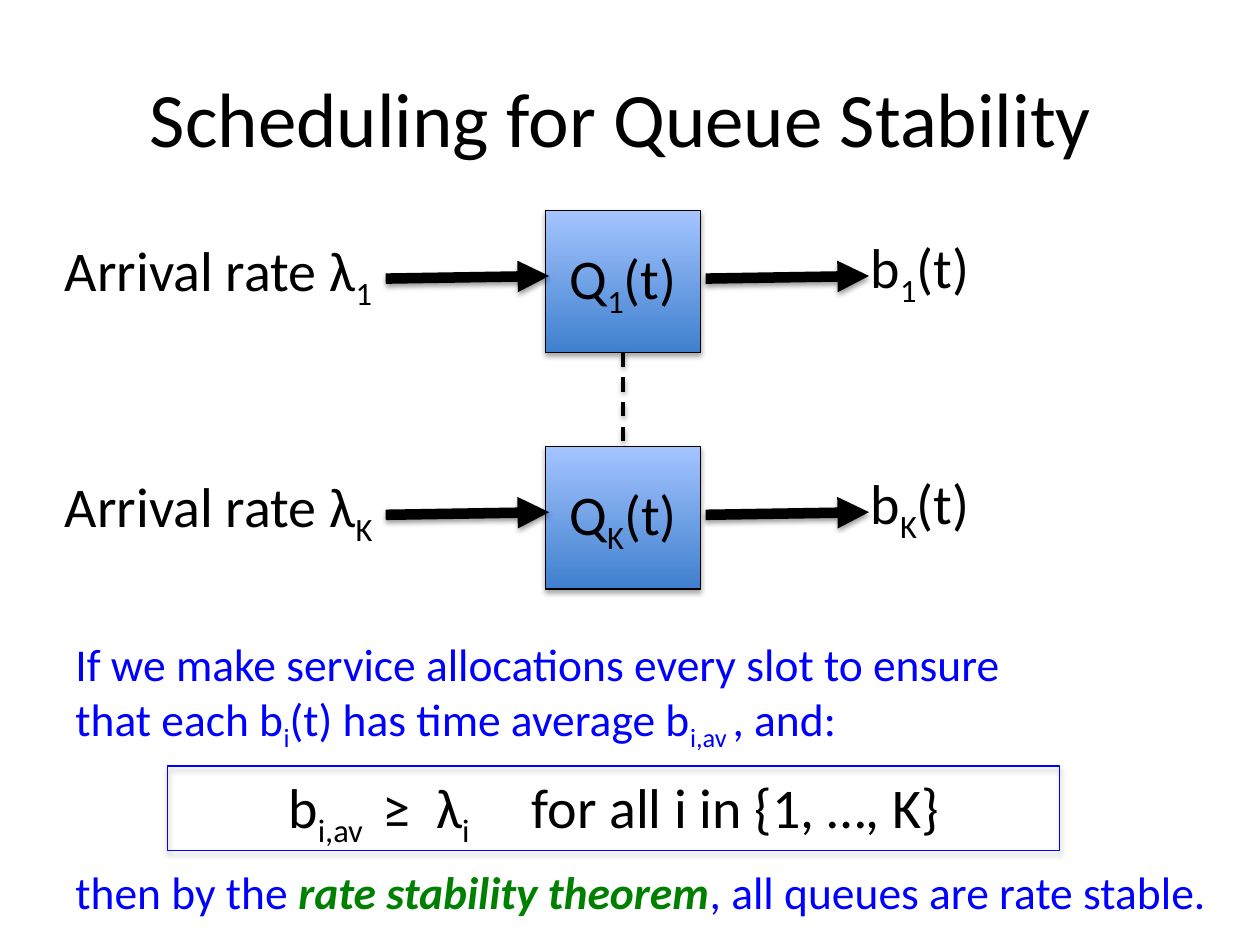
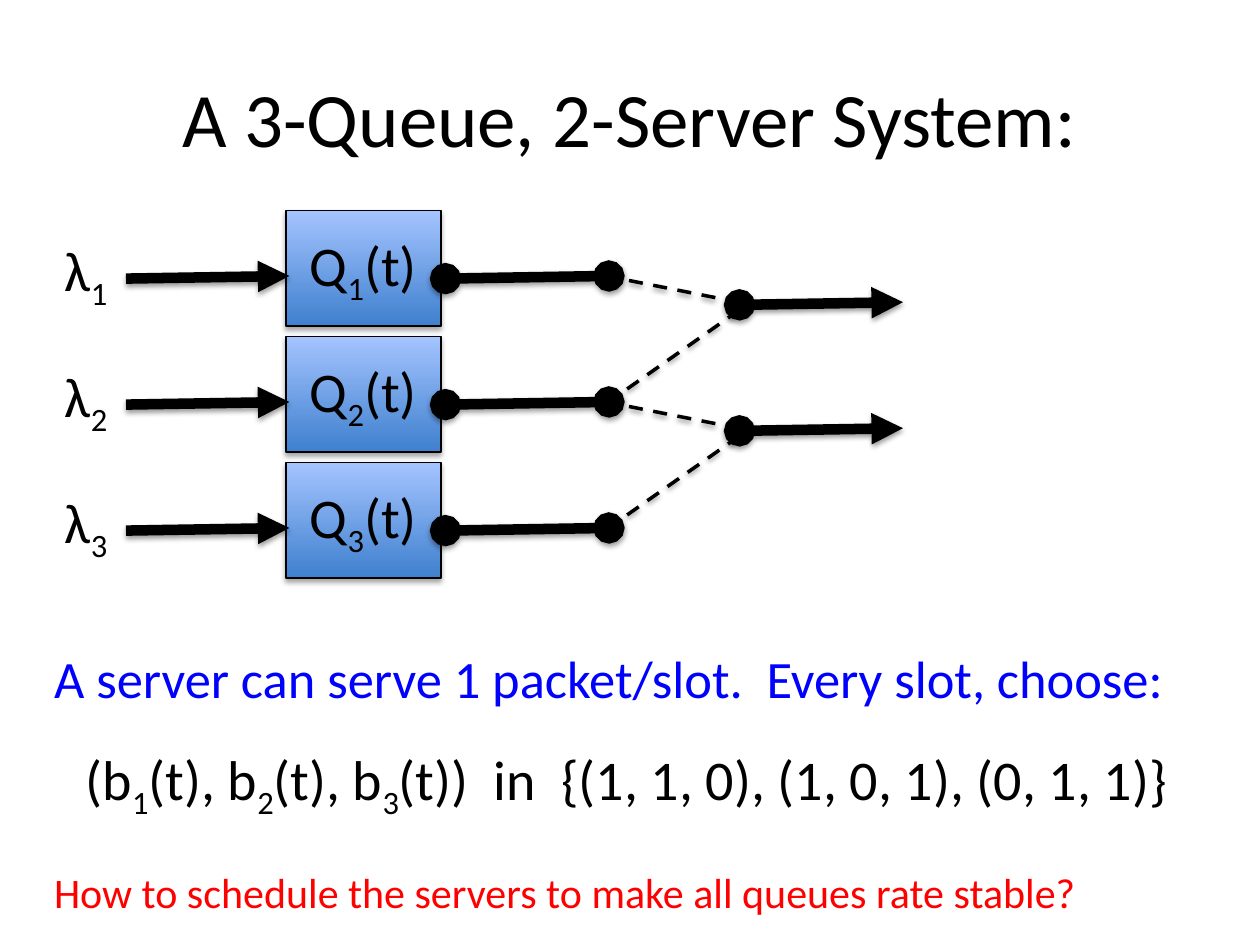
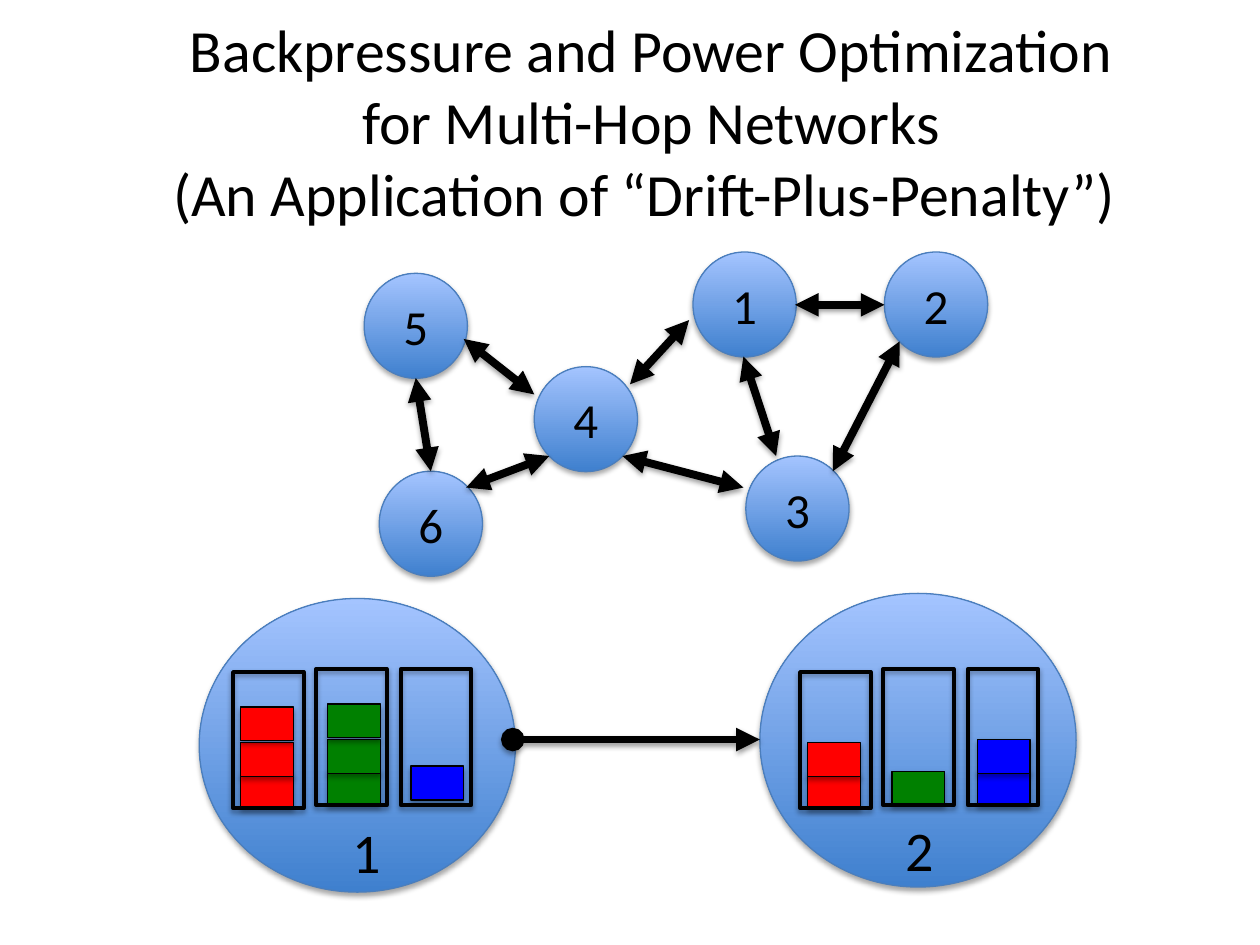
from lxml.etree import SubElement
from pptx import Presentation
from pptx.dml.color import RGBColor
from pptx.enum.dml import MSO_LINE
from pptx.enum.shapes import MSO_CONNECTOR, MSO_SHAPE
from pptx.enum.text import MSO_ANCHOR, MSO_AUTO_SIZE, PP_ALIGN
from pptx.oxml.ns import qn
from pptx.util import Pt

BLACK, BLUE, GREEN, RED = "000000", "0000FF", "008000", "FF0000"
GRADIENT = ("3F80CE", "A4C4FF")
NODE_LINE = "4B7EBC"
FONT = "Calibri"
EMPHASIS = {"bold": True, "italic": True}
LABEL_FRAME = {"word_wrap": False, "auto_size": MSO_AUTO_SIZE.SHAPE_TO_FIT_TEXT}
CENTRED_FRAME = {"word_wrap": True, "vertical_anchor": MSO_ANCHOR.MIDDLE}


def color(hex_value):
    return RGBColor.from_string(hex_value)


def apply(target, values):
    for name, value in values.items():
        setattr(target, name, value)


def points(values):
    return [Pt(value) for value in values]


class Deck:
    def __init__(self):
        self.presentation = Presentation()
        apply(self.presentation, {"slide_width": Pt(720), "slide_height": Pt(540)})

    def add_slide(self, title, size=44, box=(36, 21.6, 648, 90)):
        layout = self.presentation.slide_layouts[6]
        self.slide = self.presentation.slides.add_slide(layout)
        shape = self.slide.shapes.add_textbox(*points(box))
        self.set_text(shape, title, size, BLACK, CENTRED_FRAME, PP_ALIGN.CENTER)

    def set_text(self, shape, text, size, text_color, frame_format, alignment):
        frame = shape.text_frame
        apply(frame, frame_format)
        for index, line in enumerate(text.split("\n")):
            paragraph = frame.add_paragraph() if index else frame.paragraphs[0]
            paragraph.alignment = alignment
            for star, phrase in enumerate(line.split("*")):
                for bar, piece in enumerate(phrase.split("|")):
                    if piece:
                        run = paragraph.add_run()
                        run.text = piece
                        apply(run.font, {"name": FONT, "size": Pt(size)})
                        apply(run.font, EMPHASIS if star % 2 else {})
                        run.font.color.rgb = color(GREEN if star % 2 else text_color)
                        if bar % 2:
                            run.font._element.set("baseline", "-25000")

    def label(self, text, left, top, width, height=46, size=32, text_color=BLACK):
        shape = self.slide.shapes.add_textbox(*points((left, top, width, height)))
        self.set_text(shape, text, size, text_color, LABEL_FRAME, PP_ALIGN.LEFT)
        return shape

    def shadow(self, shape, opacity, distance):
        effects = SubElement(shape.element.spPr, qn("a:effectLst"))
        outer = SubElement(effects, qn("a:outerShdw"), blurRad=str(Pt(3.1)),
                           dist=str(Pt(distance)), dir="5400000", rotWithShape="0")
        shade = SubElement(outer, qn("a:srgbClr"), val=BLACK)
        SubElement(shade, qn("a:alpha"), val=str(opacity * 1000))

    def shape(self, kind, box, text="", size=32, fill=None, line=BLACK, width=0.75):
        shape = self.slide.shapes.add_shape(kind, *points(box))
        if fill == GRADIENT:
            shape.fill.gradient()
            shape.fill.gradient_angle = 90
            for stop, value in zip(shape.fill.gradient_stops, GRADIENT):
                stop.color.rgb = color(value)
        elif fill:
            shape.fill.solid()
            shape.fill.fore_color.rgb = color(fill)
        else:
            shape.fill.background()
        shape.line.color.rgb = color(line)
        shape.line.width = Pt(width)
        self.shadow(shape, 35, 1.8)
        if text:
            self.set_text(shape, text, size, BLACK, CENTRED_FRAME, PP_ALIGN.CENTER)
        return shape

    def queue(self, name, left, top, height):
        box = (left, top, 88.6, height)
        return self.shape(MSO_SHAPE.RECTANGLE, box, f"Q|{name}|(t)", fill=GRADIENT)

    def node(self, left, top, width, height, name=""):
        box = (left, top, width, height)
        self.shape(MSO_SHAPE.OVAL, box, name, 28, GRADIENT, NODE_LINE)

    def line(self, start, end, width=6.0, head=None, tail=None, dash=None):
        connector = self.slide.shapes.add_connector(
            MSO_CONNECTOR.STRAIGHT, *points(start + end))
        connector.line.color.rgb = color(BLACK)
        apply(connector.line, {"width": Pt(width), "dash_style": dash})
        outline = connector.element.spPr.get_or_add_ln()
        for tag, kind in (("a:headEnd", head), ("a:tailEnd", tail)):
            if kind:
                SubElement(outline, qn(tag), type=kind)
        self.shadow(connector, 38, 1.6)
        return connector

    def flow(self, left, top, head=None, tail="triangle"):
        self.line((left, top), (left + 93.4, top - 1.5), head=head, tail=tail)

    def dashes(self, start, end):
        return self.line(start, end, 2, dash=MSO_LINE.DASH)


def queue_stability(deck):
    deck.add_slide("Scheduling for Queue Stability ")
    queues = []
    for row, name in enumerate("1K"):
        top = 120.2 + 135 * row
        queues.append(deck.queue(name, 311.8, top, 81.4))
        for left in (403.2, 220.4):
            deck.flow(left, top + 39)
        deck.label(f"b|{name}|(t)", 490.4, top + 9, 73)
        deck.label(f"Arrival rate λ|{name}|", 30, top + 10.8, 195)
    link = deck.dashes((356, 201.6), (356, 255.2))
    link.begin_connect(queues[0], 2)
    link.end_connect(queues[1], 0)

    theorem = deck.label(
        "If we make service allocations every slot to ensure\n"
        "that each b|i|(t) has time average b|i,av |, and:\n"
        "then by the *rate stability theorem*, all queues are rate stable.",
        36, 360, 673.2, 165, 26, BLUE)
    theorem.text_frame.paragraphs[2].space_before = Pt(63.5)
    deck.shape(MSO_SHAPE.RECTANGLE, (95.8, 437.8, 509.8, 48.2), line=BLUE)
    condition = deck.label("b|i,av | ≥  λ|i|\tfor all i in {1, …, K}",
                           157.7, 437.8, 397.4)
    properties = condition.text_frame.paragraphs[0]._p.get_or_add_pPr()
    tabs = SubElement(properties, qn("a:tabLst"))
    SubElement(tabs, qn("a:tab"), pos=str(Pt(139)), algn="l")


def three_queues(deck):
    deck.add_slide("A 3-Queue, 2-Server System:")
    pitch = 72
    for row in range(3):
        top = 120.2 + pitch * row
        deck.queue(row + 1, 163.4, top, 66.2)
        deck.flow(254.6, top + 39, "oval", "oval")
        deck.flow(72, top + 39)
        deck.label(f"λ|{row + 1}|", 30, top + 10.8, 41.8)
    for row in range(2):
        offset = pitch * row
        deck.flow(422.6, 174.2 + offset, "oval")
        deck.dashes((422.6, 172.8 + offset), (347.8, 158 + offset))
        deck.dashes((422.6, 177.1 + offset), (347.8, 229.7 + offset))
    deck.label("(b|1|(t), b|2|(t), b|3|(t))  in  {(1, 1, 0), (1, 0, 1), (0, 1, 1)}",
               41.8, 421.9, 645.8)
    deck.label("A server can serve 1 packet/slot.  Every slot, choose:",
               23.8, 365.8, 658, 44, 30, BLUE)
    deck.label("How to schedule the servers to make all queues rate stable?",
               23.8, 491.8, 607.7, 36, 24, RED)


def multi_hop(deck):
    deck.add_slide("Backpressure and Power Optimization\nfor Multi-Hop Networks\n"
                   "(An Application of “Drift-Plus-Penalty”) ",
                   34.2, (30, 23.8, 684, 90))
    nodes = {"4": (305.3, 209.5), "5": (208.1, 156.2), "3": (426.2, 260.6),
             "1": (396, 144), "6": (216.7, 269.3), "2": (505.4, 144)}
    for name, (left, top) in nodes.items():
        deck.node(left, top, 59, 60, name)
    links = [((454.3, 174.2), (505.4, 174.2)), ((475.9, 269.3), (514.1, 195.1)),
             ((443.5, 260.6), (424.8, 203.8)), ((360, 219.6), (393.8, 182.9)),
             ((355.7, 260.6), (424.8, 278.6)), ((265, 193.7), (305.3, 225.4)),
             ((266.4, 278.6), (313.9, 260.6)), ((246.2, 269.3), (237.6, 216))]
    for start, end in links:
        deck.line(start, end, 4.5, "triangle", "triangle")

    deck.node(113.8, 342, 180.7, 167.8)
    deck.node(434.2, 339.1, 180.7, 167.8)
    deck.line((293, 422.6), (434.2, 422.6), 4.5, "oval", "triangle")
    deck.label("1", 194.4, 463.7, 31)
    deck.label("2", 510.5, 462.2, 31)

    levels = (58.5, 40.5, 20)
    buffers = [(RED, 133.2, 384, 4.3, 0, 3), (GREEN, 180.7, 382.3, 6.5, 0, 3),
               (BLUE, 229, 382.3, 5.8, 3, 1), (RED, 457.2, 384, 4.3, 0, 2),
               (GREEN, 504.7, 382.3, 5, 0, 1), (BLUE, 553, 382.3, 5.4, 0, 2)]
    for fill, left, top, inset, lift, packets in buffers:
        for level in levels[:packets]:
            box = (left + inset, top + level - lift, 30.2, 19.4)
            deck.shape(MSO_SHAPE.RECTANGLE, box, fill=fill)
        deck.shape(MSO_SHAPE.RECTANGLE, (left, top, 40.3, 77.8), width=2.25)


def main():
    deck = Deck()
    for build in (queue_stability, three_queues, multi_hop):
        build(deck)
    deck.presentation.save("out.pptx")


if __name__ == "__main__":
    main()
